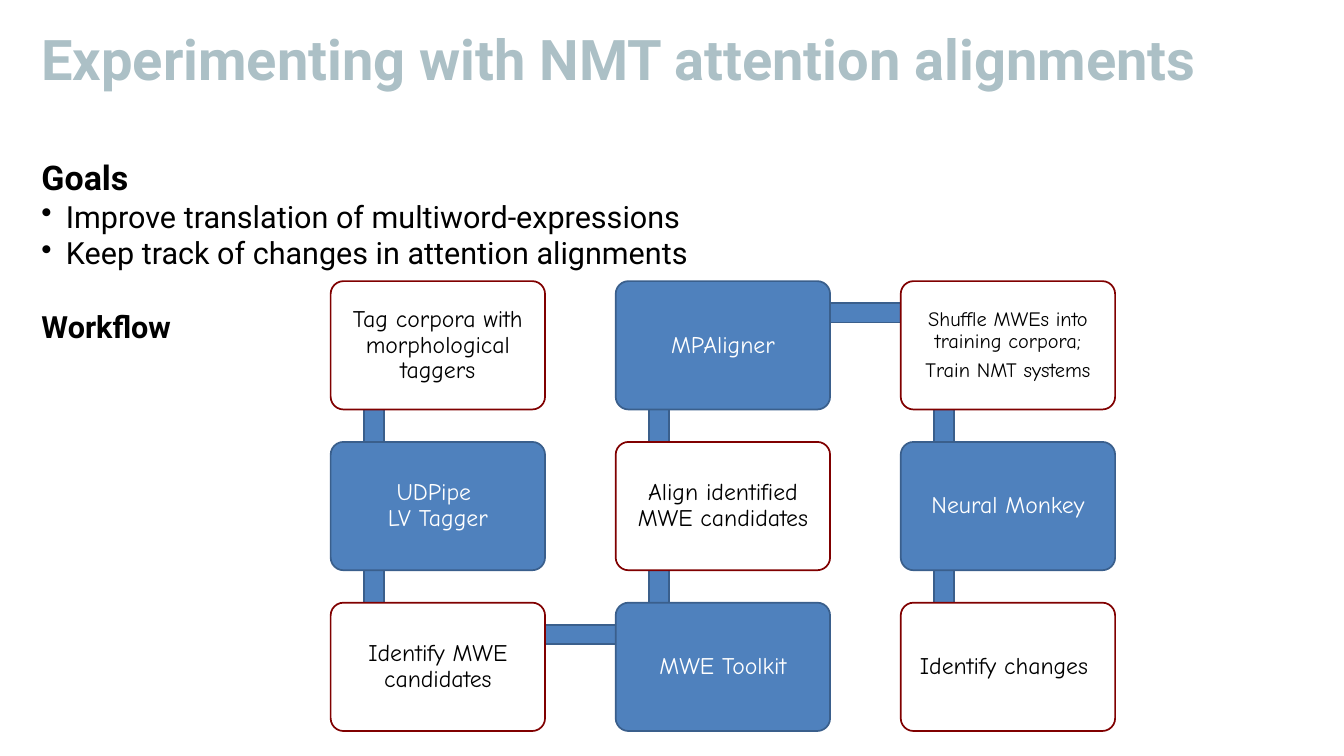
import pptx
import pptx.dml.color
import pptx.enum.shapes
import pptx.enum.text
import pptx.util
from lxml import etree

Pt = pptx.util.Pt
MSO_SHAPE = pptx.enum.shapes.MSO_SHAPE
ALIGN = pptx.enum.text.PP_ALIGN
ANCHOR = pptx.enum.text.MSO_ANCHOR

THEME = {
    "title": "ACC0C6", "ink": "000000", "paper": "FFFFFF",
    "tool": "4F81BD", "tool_line": "3A5F8C", "task_line": "800000",
    "body_font": "Roboto", "step_font": "Comic Neue",
    "title_size": 66, "goals_size": 40, "body_size": 36,
    "step_size": 28, "small_step_size": 24, "line": 2,
}


def style_text(paragraph, font, size, color, bold=False):
    for run in paragraph.runs:
        run.font.name = THEME[font]
        run.font.size = Pt(THEME[size])
        run.font.bold = bold
        run.font.color.rgb = pptx.dml.color.RGBColor.from_string(THEME[color])


def add_block(kind, left, top, width, height, fill, line):
    block = slide.shapes.add_shape(kind, Pt(left), Pt(top), Pt(width), Pt(height))
    block.shadow.inherit = False
    block.fill.solid()
    block.fill.fore_color.rgb = pptx.dml.color.RGBColor.from_string(THEME[fill])
    block.line.color.rgb = pptx.dml.color.RGBColor.from_string(THEME[line])
    block.line.width = Pt(THEME["line"])
    return block


deck = pptx.Presentation()
deck.slide_width, deck.slide_height = Pt(1583.3), Pt(890.6)
slide = deck.slides.add_slide(deck.slide_layouts[6])

# Title
title = slide.shapes.add_textbox(Pt(41.8), Pt(43.2), Pt(1499.8), Pt(126)).text_frame
title.word_wrap = True
title.text = "Experimenting with NMT attention alignments"
title.paragraphs[0].line_spacing = 0.76
style_text(title.paragraphs[0], "body_font", "title_size", "title", bold=True)

# Goals and workflow heading
body = slide.shapes.add_textbox(Pt(41.8), Pt(181.4), Pt(1499.8), Pt(668.9)).text_frame
body.word_wrap = True
body.text = "\n".join([
    "Goals",
    "Improve translation of multiword-expressions",
    "Keep track of changes in attention alignments",
    "Workflow",
])
goals, *aims, workflow = body.paragraphs
style_text(goals, "body_font", "goals_size", "ink", bold=True)
for aim in aims:
    properties = aim._p.get_or_add_pPr()
    properties.set("marL", str(Pt(28.8)))
    properties.set("indent", str(-Pt(28.8)))
    bullet = etree.SubElement(properties, pptx.oxml.ns.qn("a:buChar"))
    bullet.set("char", "•")
    style_text(aim, "body_font", "body_size", "ink")
workflow.space_before = Pt(44)
style_text(workflow, "body_font", "body_size", "ink", bold=True)

# Workflow grid: columns from left to right, each listed from top to bottom
STEPS = [
    ["Tag corpora with morphological taggers", "UDPipe \vLV Tagger",
     "Identify MWE candidates"],
    ["MPAligner", "Align identified MWE candidates", "MWE Toolkit"],
    ["Shuffle MWEs into training corpora;\nTrain NMT systems", "Neural Monkey",
     "Identify changes "],
]
GRID_LEFT, GRID_TOP = 389.5, 331.2
COLUMN_STEP, ROW_STEP = 335.8, 189.4
STEP_WIDTH, STEP_HEIGHT = 252.6, 151.2
BAR = 23
lefts = [GRID_LEFT + COLUMN_STEP * column for column in range(3)]
tops = [GRID_TOP + ROW_STEP * row for row in range(3)]

# Bars joining the steps, behind the boxes
bars = [(left + 39.6, top + 37.4, BAR, ROW_STEP) for left in lefts for top in tops[:2]]
bars += [(lefts[column] + 51.2, tops[row] + 25.9, COLUMN_STEP, BAR)
         for column, row in [(0, 2), (1, 0)]]
for bar in bars:
    add_block(MSO_SHAPE.RECTANGLE, *bar, "tool", "tool_line")

# Step boxes: tasks in white alternate with tools in blue
for column, steps in enumerate(STEPS):
    for row, step in enumerate(steps):
        is_tool = (column + row) % 2 == 1
        fill, line, ink = (("tool", "tool_line", "paper") if is_tool
                           else ("paper", "task_line", "ink"))
        box = add_block(MSO_SHAPE.ROUNDED_RECTANGLE, lefts[column], tops[row],
                        STEP_WIDTH, STEP_HEIGHT, fill, line)
        box.adjustments[0] = 0.1
        label = box.text_frame
        label.word_wrap = True
        label.vertical_anchor = ANCHOR.MIDDLE
        label.margin_left = label.margin_right = Pt(13)
        label.margin_top = label.margin_bottom = Pt(13)
        label.text = step
        size = "small_step_size" if "\n" in step else "step_size"
        for index, paragraph in enumerate(label.paragraphs):
            paragraph.alignment = ALIGN.CENTER
            paragraph.line_spacing = 0.9
            if index:
                paragraph.space_before = Pt(8)
            style_text(paragraph, "step_font", size, ink)

deck.save("out.pptx")
